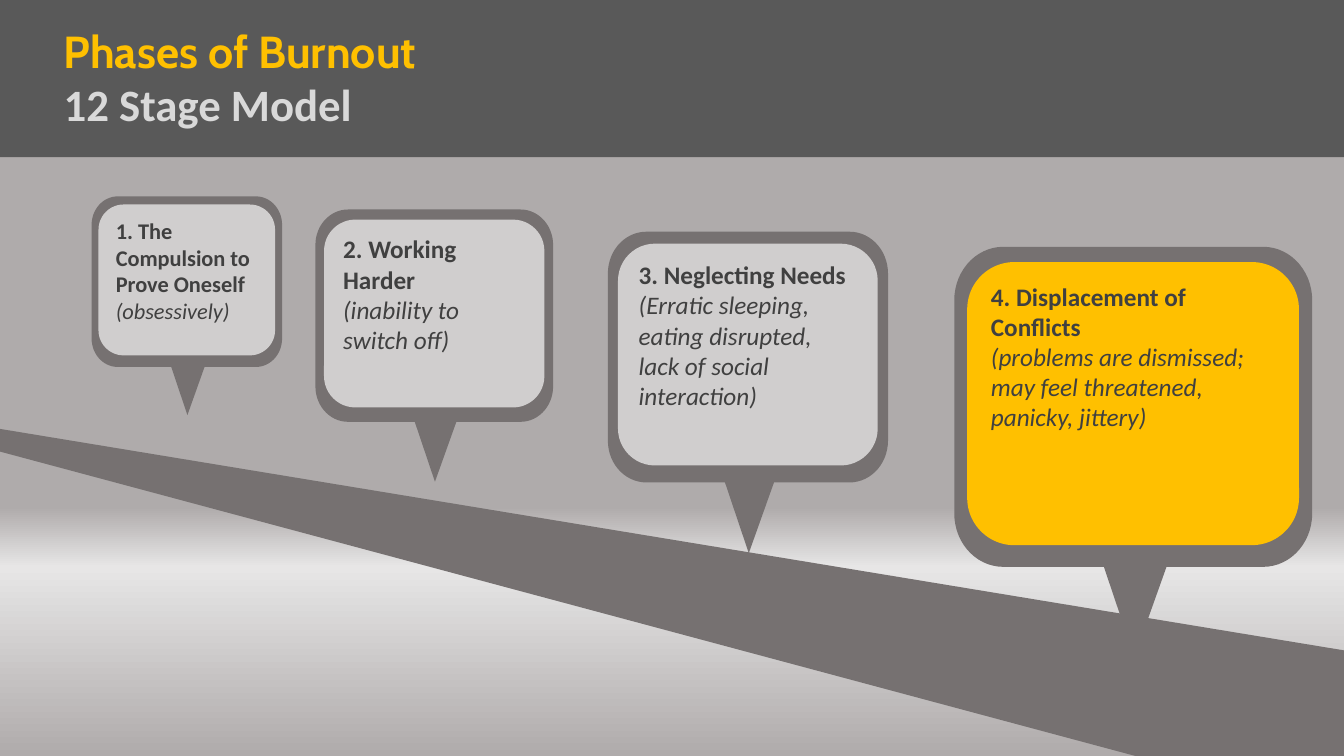
from dataclasses import dataclass
from math import cos, radians, sin

from lxml.etree import SubElement
from pptx import Presentation
from pptx.dml.color import RGBColor
from pptx.enum.shapes import MSO_SHAPE
from pptx.enum.text import MSO_ANCHOR, MSO_AUTO_SIZE, PP_ALIGN
from pptx.oxml.ns import qn
from pptx.util import Cm, Pt


@dataclass(frozen=True)
class Theme:
    dark: str = "595959"
    frame: str = "767171"
    card: str = "D0CECE"
    gold: str = "FFC000"
    ink: str = "404040"
    pale: str = "D9D9D9"
    back: tuple = ((0, "AFABAB"), (67, "AFABAB"), (75, "E7E6E6"), (100, "AFABAB"))
    head: str = "Cabin"
    body: str = "Calibri"
    title: int = 32
    text: int = 18
    small: int = 16


THEME = Theme()
WIDE, HIGH = 33.87, 19.05

# box (left, top, width, height), stage, note, note on a new line, size, fill
STAGES = [
    ((2.31, 4.95, 4.8, 5.51), "1. The Compulsion to Prove Oneself ",
     "(obsessively)", False, THEME.small, THEME.card),
    ((7.95, 5.28, 5.99, 6.86), "2. Working Harder",
     "(inability to switch off)", True, THEME.text, THEME.card),
    ((15.32, 5.84, 7.06, 8.1), "3. Neglecting Needs",
     "(Erratic sleeping, eating disrupted, lack of social interaction)",
     True, THEME.text, THEME.card),
    ((24.05, 6.22, 9.02, 10.34), "4. Displacement of Conflicts",
     "(problems are dismissed; may feel threatened, panicky, jittery)",
     True, THEME.text, THEME.gold),
]


def paint(shape, color):
    """Give a shape a plain fill with no line or shadow."""
    shape.shadow.inherit = False
    shape.fill.solid()
    shape.fill.fore_color.rgb = RGBColor.from_string(color)
    shape.line.fill.background()


def style(run, size, color, font, bold=False, italic=False):
    run.font.size = Pt(size)
    run.font.name = font
    run.font.color.rgb = RGBColor.from_string(color)
    run.font.bold = bold
    run.font.italic = italic


def draw(shapes, points, color):
    """Draw a closed outline through points given in cm."""
    spots = [(Cm(x), Cm(y)) for x, y in points]
    pen = shapes.build_freeform(*spots[0])
    pen.add_line_segments(spots[1:], close=True)
    paint(pen.convert_to_shape(), color)


def bubble(box):
    """Return the outline of a rounded callout whose tail ends at the box's foot."""
    left, top, wide, high = box
    base = 0.78
    rx, ry = 0.137, 0.13

    def bend(cx, cy, start):
        turns = [radians(start + step) for step in range(0, 91, 6)]
        return [(cx + rx * cos(a), cy + ry * sin(a)) for a in turns]

    tail = [(0.593, base), (0.503, 1), (0.418, base)]
    shares = (bend(rx, ry, 180) + bend(1 - rx, ry, 270)
              + bend(1 - rx, base - ry, 0) + tail + bend(rx, base - ry, 90))
    return [(left + x * wide, top + y * high) for x, y in shares]


def add_stage(slide, box, stage, note, split, size, color):
    left, top, wide, high = box
    group = slide.shapes.add_group_shape()
    draw(group.shapes, bubble(box), THEME.frame)
    card = group.shapes.add_shape(
        MSO_SHAPE.ROUNDED_RECTANGLE,
        Cm(left + 0.036 * wide), Cm(top + 0.037 * high),
        Cm(0.927 * wide), Cm(0.69 * high))
    paint(card, color)
    frame = card.text_frame
    frame.word_wrap = True
    frame.vertical_anchor = MSO_ANCHOR.TOP
    frame.text = stage
    first = last = frame.paragraphs[0]
    if split:
        last = frame.add_paragraph()
    extra = last.add_run()
    extra.text = note
    style(first.runs[0], size, THEME.ink, THEME.body, bold=True)
    style(extra, size, THEME.ink, THEME.body, italic=True)
    for para in frame.paragraphs:
        para.alignment = PP_ALIGN.LEFT


def add_back(slide):
    fill = slide.background.fill
    fill.gradient()
    fill.gradient_angle = 270
    stops = slide.element.xpath(".//a:gsLst")[0]
    for stop in list(stops):
        stops.remove(stop)
    for place, color in THEME.back:
        stop = SubElement(stops, qn("a:gs"), pos=str(place * 1000))
        SubElement(stop, qn("a:srgbClr"), val=color)


def add_ramp(slide):
    points = [(-0.05, 10.8), (34, 16.41), (33.91, 20.47), (0, 11.38)]
    draw(slide.shapes, points, THEME.frame)


def add_head(slide, left, top, wide, high):
    band = slide.shapes.add_shape(
        MSO_SHAPE.RECTANGLE, Cm(left), Cm(top), Cm(wide), Cm(high))
    paint(band, THEME.dark)
    title = slide.shapes.title
    band.element.addnext(title.element)  # lift the title above the band
    title.left, title.top = Cm(left + 1.35), Cm(top + 0.46)
    title.width, title.height = Cm(16.36), Cm(3)
    frame = title.text_frame
    frame.text = "Phases of Burnout\n12 Stage Model"
    frame.word_wrap = True
    frame.auto_size = MSO_AUTO_SIZE.NONE
    frame.vertical_anchor = MSO_ANCHOR.TOP
    looks = [(THEME.gold, THEME.head), (THEME.pale, THEME.body)]
    for para, (color, font) in zip(frame.paragraphs, looks):
        para.alignment = PP_ALIGN.LEFT
        style(para.runs[0], THEME.title, color, font, bold=True)


def main():
    deck = Presentation()
    deck.slide_width, deck.slide_height = Cm(WIDE), Cm(HIGH)
    slide = deck.slides.add_slide(deck.slide_layouts[5])
    add_back(slide)
    add_ramp(slide)
    for stage in STAGES:
        add_stage(slide, *stage)
    add_head(slide, 0, 0, WIDE, 3.96)
    deck.save("out.pptx")


if __name__ == "__main__":
    main()
